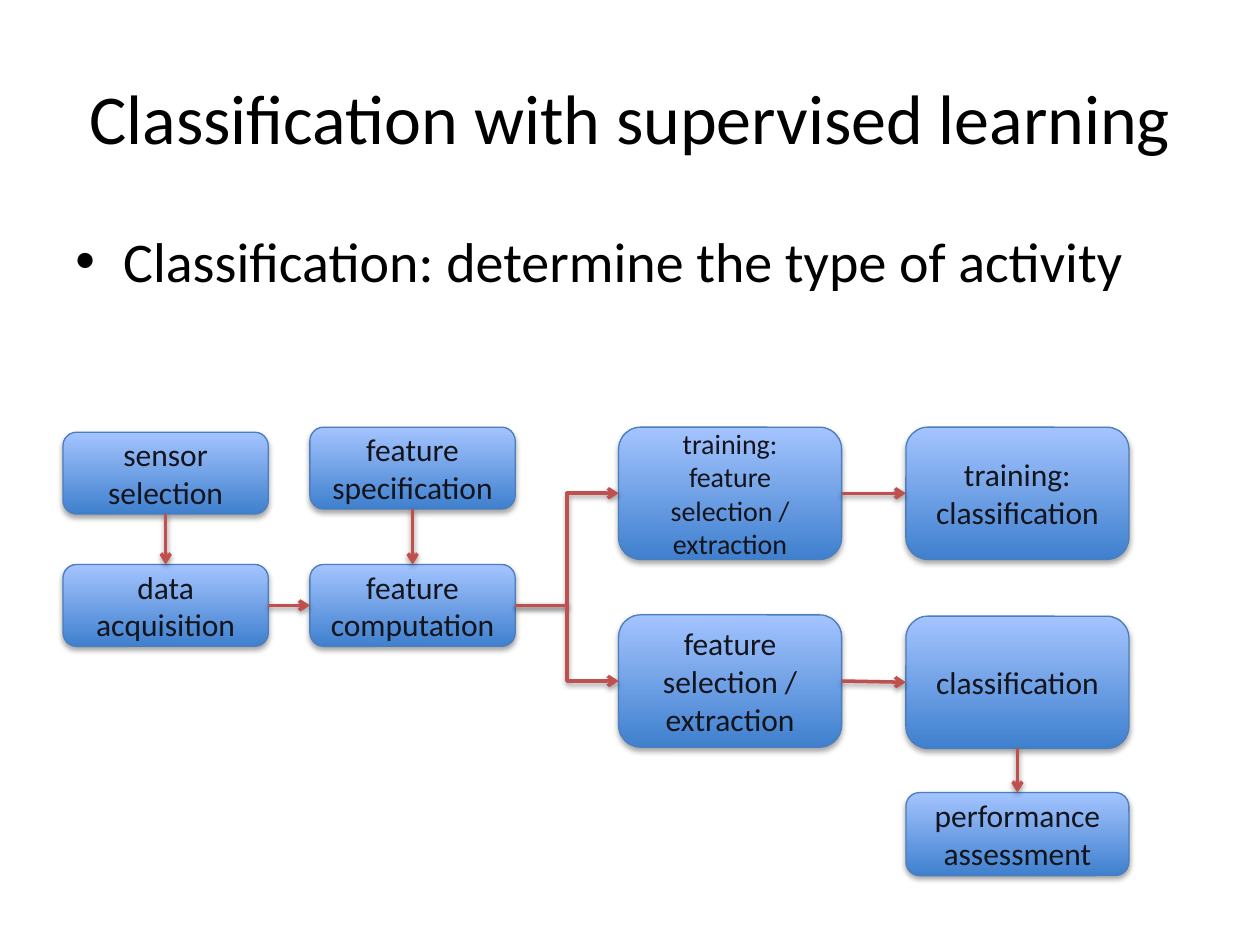
from lxml.etree import SubElement
from pptx import Presentation
from pptx.dml.color import RGBColor
from pptx.enum.shapes import MSO_CONNECTOR, MSO_SHAPE
from pptx.enum.text import MSO_ANCHOR, PP_ALIGN
from pptx.oxml.ns import qn
from pptx.util import Inches, Pt

COLORS = {
    "text": "000000",
    "label": "13141C",
    "low": "3F80CE",
    "high": "A4C4FF",
    "border": "4B7EBC",
    "arrow": "C0504D",
    "shadow": "000000",
}
FONT = "Calibri"
GRID_COLS, GRID_ROWS = 100, 75
SMALL, LARGE = (16.3, 6.5), (17.7, 10.5)
TOP, LEFT, BOTTOM, RIGHT = range(4)

STEPS = {
    "data": (0, 10.9, SMALL, 18, ["data acquisition"]),
    "features": (19.6, 10.9, SMALL, 18, ["feature computation"]),
    "sensor": (0, 0.4, SMALL, 18, ["sensor", "selection"]),
    "spec_step": (19.6, 0, SMALL, 18, ["feature specification"]),
    "select": (44.1, 14.9, LARGE, 18, ["feature selection / extraction"]),
    "classify": (66.9, 15, LARGE, 18, ["classification"]),
    "train_select": (44.1, 0, LARGE, 16,
                     ["training:", "feature selection / extraction"]),
    "train_classify": (66.9, 0, LARGE, 18, ["training:", "classification"]),
    "assess": (66.9, 29, (17.7, 6.6), 18, ["performance", "assessment"]),
}
ARROWS = [
    ("sensor", BOTTOM, "data", TOP),
    ("spec_step", BOTTOM, "features", TOP),
    ("data", RIGHT, "features", LEFT),
    ("features", RIGHT, "train_select", LEFT),
    ("features", RIGHT, "select", LEFT),
    ("train_select", RIGHT, "train_classify", LEFT),
    ("select", RIGHT, "classify", LEFT),
    ("classify", BOTTOM, "assess", TOP),
]


def rgb(name):
    return RGBColor.from_string(COLORS[name])


def add_shadow(effects, distance, opacity):
    shadow = SubElement(effects, qn("a:outerShdw"), blurRad="40000",
                        dist=str(distance), dir="5400000", rotWithShape="0")
    color = SubElement(shadow, qn("a:srgbClr"), val=COLORS["shadow"])
    SubElement(color, qn("a:alpha"), val=str(opacity * 1000))


def write(p, text, size, color):
    r = p.add_run()
    r.text = text
    r.font.name = FONT
    r.font.size = Pt(size)
    r.font.color.rgb = rgb(color)


def add_title(s, box, text):
    tf = s.shapes.add_textbox(*box).text_frame
    tf.word_wrap = True
    tf.vertical_anchor = MSO_ANCHOR.MIDDLE
    p = tf.paragraphs[0]
    p.alignment = PP_ALIGN.CENTER
    write(p, text, 40, "text")


def add_body(s, box, text):
    tf = s.shapes.add_textbox(*box).text_frame
    tf.word_wrap = True
    p = tf.paragraphs[0]
    p.space_before = Pt(6.4)
    pPr = p._p.get_or_add_pPr()
    indent = Inches(0.38)
    pPr.set("marL", str(indent))
    pPr.set("indent", str(-indent))
    SubElement(pPr, qn("a:buFont"), typeface="Arial")
    SubElement(pPr, qn("a:buChar"), char="•")
    write(p, text, 32, "text")


def add_step(s, box, size, lines):
    sp = s.shapes.add_shape(MSO_SHAPE.ROUNDED_RECTANGLE, *box)
    sp.fill.gradient()
    sp.fill.gradient_angle = 90
    for stop, color in zip(sp.fill.gradient_stops, ("low", "high")):
        stop.color.rgb = rgb(color)
    for stop, position in zip(sp.fill.gradient_stops, (0, 1)):
        stop.position = position
    sp.line.color.rgb = rgb("border")
    sp.line.width = Pt(0.75)
    sp.shadow.inherit = False
    add_shadow(sp._element.spPr.find(qn("a:effectLst")), 23000, 35)
    tf = sp.text_frame
    tf.word_wrap = True
    tf.vertical_anchor = MSO_ANCHOR.MIDDLE
    for i, line in enumerate(lines):
        p = tf.add_paragraph() if i else tf.paragraphs[0]
        p.alignment = PP_ALIGN.CENTER
        write(p, line, size, "label")
    return sp


def add_arrow(s, start, start_site, end, end_site, kind):
    cx = s.shapes.add_connector(kind, 0, 0, 0, 0)
    cx.begin_connect(start, start_site)
    cx.end_connect(end, end_site)
    cx.line.color.rgb = rgb("arrow")
    cx.line.width = Pt(2)
    SubElement(cx.line._get_or_add_ln(), qn("a:tailEnd"), type="arrow")
    add_shadow(SubElement(cx._element.spPr, qn("a:effectLst")), 20000, 38)


def add_flow(s, box, col, row):
    left, top = box[:2]
    steps = {}
    for name, (x, y, (w, h), size, lines) in STEPS.items():
        place = (left + int(x * col), top + int(y * row),
                 int(w * col), int(h * row))
        steps[name] = add_step(s, place, size, lines)
    for start, start_site, end, end_site in ARROWS:
        branches = start == "features"
        kind = MSO_CONNECTOR.ELBOW if branches else MSO_CONNECTOR.STRAIGHT
        add_arrow(s, steps[start], start_site, steps[end], end_site, kind)


def main():
    prs = Presentation()
    prs.slide_width, prs.slide_height = Inches(10), Inches(7.5)
    col, row = prs.slide_width / GRID_COLS, prs.slide_height / GRID_ROWS

    def area(x, y, w, h):
        return int(x * col), int(y * row), int(w * col), int(h * row)

    s = prs.slides.add_slide(prs.slide_layouts[6])
    add_title(s, area(5, 3, 90, 12.5), "Classification with supervised learning")
    add_body(s, area(5, 17.5, 90, 16.8),
             "Classification: determine the type of activity")
    add_flow(s, area(5, 33.9, 84.6, 35.6), col, row)
    prs.save("out.pptx")


if __name__ == "__main__":
    main()
